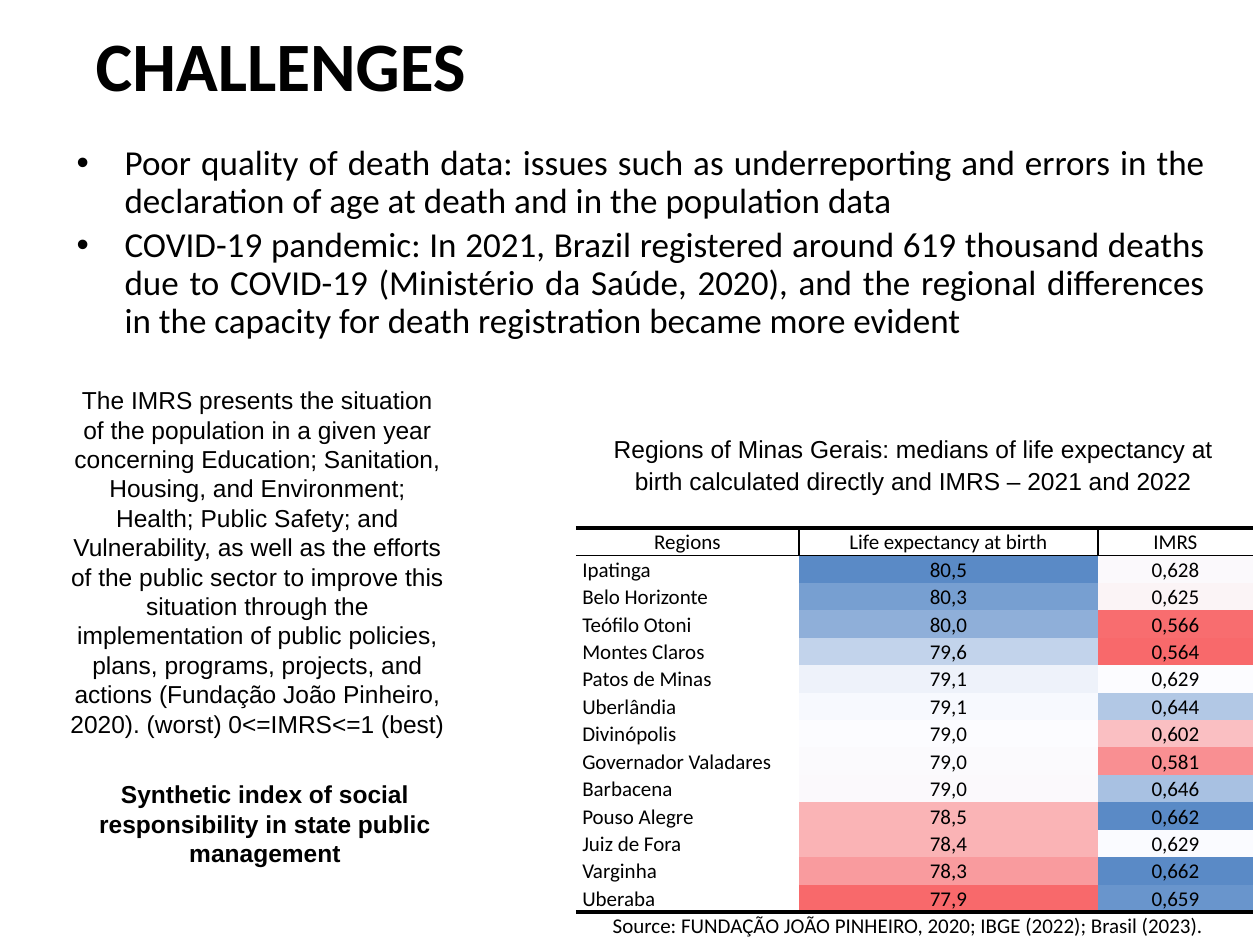
from pptx import Presentation
from pptx import util as u
from pptx.dml.color import RGBColor
from pptx.enum import text
from pptx.oxml.ns import qn
from lxml import etree

PX = 914400 // 126
BLACK = "000000"
CENTER, LEFT, JUSTIFY = text.PP_ALIGN.CENTER, text.PP_ALIGN.LEFT, text.PP_ALIGN.JUSTIFY

# Content
TITLE = "CHALLENGES"
BULLETS = [
    "Poor quality of death data: issues such as underreporting and errors in the "
    "declaration of age at death and in the population data",
    "COVID-19 pandemic: In 2021, Brazil registered around 619 thousand deaths due to "
    "COVID-19 (Ministério da Saúde, 2020), and the regional differences in the capacity "
    "for death registration became more evident",
]
ARIAL = dict(name="Arial", size=14)
CALIBRI = dict(name="Calibri", size=12)
# text, box in px, font, line spacing
NOTES = [
    ("Regions of Minas Gerais: medians of life expectancy at birth calculated directly "
     "and IMRS – 2021 and 2022", (587, 426, 653, 77), ARIAL, 1.07),
    ("The IMRS presents the situation of the population in a given year concerning "
     "Education; Sanitation, Housing, and Environment; Health; Public Safety; and "
     "Vulnerability, as well as the efforts of the public sector to improve this situation "
     "through the implementation of public policies, plans, programs, projects, and actions "
     "(Fundação João Pinheiro, 2020). (worst) 0<=IMRS<=1 (best)",
     (58, 379, 399, 369), ARIAL, 1),
    ("Source: FUNDAÇÃO JOÃO PINHEIRO, 2020; IBGE (2022); Brasil (2023).",
     (576, 906, 664, 38), CALIBRI, 1),
    ("Synthetic index of social responsibility in state public management",
     (58, 773, 414, 102), dict(ARIAL, bold=True), 1),
]
HEADER = ["Regions", "Life expectancy at birth", "IMRS"]
# region, life expectancy, its fill, IMRS, its fill
REGIONS = [
    ("Ipatinga", "80,5", "5A8AC6", "0,628", "FBF9FC"),
    ("Belo Horizonte", "80,3", "779FD1", "0,625", "FBF4F6"),
    ("Teófilo Otoni", "80,0", "8FAFD9", "0,566", "F86D6F"),
    ("Montes Claros", "79,6", "C2D3EB", "0,564", "F8696B"),
    ("Patos de Minas", "79,1", "EEF2FA", "0,629", "FCFCFF"),
    ("Uberlândia", "79,1", "F7F9FE", "0,644", "B2C8E5"),
    ("Divinópolis", "79,0", "FCFCFF", "0,602", "FABFC2"),
    ("Governador Valadares", "79,0", "FBFAFD", "0,581", "F98F92"),
    ("Barbacena", "79,0", "FBF9FC", "0,646", "A8C1E2"),
    ("Pouso Alegre", "78,5", "FAB4B6", "0,662", "5A8AC6"),
    ("Juiz de Fora", "78,4", "FAB3B5", "0,629", "FAFBFF"),
    ("Varginha", "78,3", "F99B9E", "0,662", "5A8AC6"),
    ("Uberaba", "77,9", "F8696B", "0,659", "6995CC"),
]
TABLE_AT, COLUMNS, ROW = (576, 528), (223, 299, 155), 27


def rgb(value):
    return RGBColor.from_string(value)


def box(*lengths):
    return [n * PX for n in lengths]


def place(sp, lengths):
    for name, value in zip(("left", "top", "width", "height"), box(*lengths)):
        setattr(sp, name, value)


def write(p, words, font, **layout):
    for name, value in layout.items():
        setattr(p, name, value)
    r = p.add_run()
    r.text = words
    for name, value in font.items():
        setattr(r.font, name, u.Pt(value) if name == "size" else value)
    r.font.color.rgb = rgb(BLACK)


def border(cell, side, width):
    ln = etree.SubElement(cell._tc.get_or_add_tcPr(), qn("a:ln" + side))
    if not width:
        etree.SubElement(ln, qn("a:noFill"))
        return
    ln.set("w", str(u.Pt(width)))
    fill = etree.SubElement(ln, qn("a:solidFill"))
    etree.SubElement(fill, qn("a:srgbClr")).set("val", BLACK)


prs = Presentation()
prs.slide_width, prs.slide_height = u.Inches(10), u.Inches(7.5)
s = prs.slides.add_slide(prs.slide_layouts[1])

# Title
title = s.shapes.title
place(title, (83, 15, 1134, 98))
tf = title.text_frame
tf.auto_size = text.MSO_AUTO_SIZE.NONE
tf.vertical_anchor = text.MSO_ANCHOR.MIDDLE
write(tf.paragraphs[0], TITLE, dict(name="Calibri", size=39.6, bold=True), alignment=LEFT)

# Bullet list
body = s.placeholders[1]
place(body, (49, 139, 1169, 215))
tf = body.text_frame
tf.auto_size = text.MSO_AUTO_SIZE.NONE
for i, words in enumerate(BULLETS):
    p = tf.add_paragraph() if i else tf.paragraphs[0]
    pPr = p._p.get_or_add_pPr()
    pPr.set("marL", str(u.Inches(0.5)))
    pPr.set("indent", str(-u.Inches(0.38)))
    etree.SubElement(pPr, qn("a:buChar")).set("char", "•")
    write(p, words, dict(name="Calibri", size=20), alignment=JUSTIFY,
          line_spacing=0.9, space_before=u.Pt(3.6 if i else 0))

# Table
rows = [(HEADER, [None] * 3)]
rows += [((name, life, imrs), (None, life_fill, imrs_fill))
         for name, life, life_fill, imrs, imrs_fill in REGIONS]
last = len(rows) - 1
table = s.shapes.add_table(len(rows), len(COLUMNS),
                           *box(*TABLE_AT, sum(COLUMNS), ROW * len(rows))).table
table.first_row = table.horz_banding = False
for column, width in zip(table.columns, COLUMNS):
    column.width = width * PX
for i, (words, fills) in enumerate(rows):
    table.rows[i].height = ROW * PX
    for j, (word, fill) in enumerate(zip(words, fills)):
        cell = table.cell(i, j)
        cell.margin_left = cell.margin_right = u.Inches(0.05)
        cell.margin_top = cell.margin_bottom = 0
        cell.vertical_anchor = text.MSO_ANCHOR.BOTTOM if i else text.MSO_ANCHOR.MIDDLE
        border(cell, "L", 1 if i == 0 and j > 0 else 0)
        border(cell, "R", 1 if i == 0 and j < 2 else 0)
        border(cell, "T", {0: 2.25, 1: 1}.get(i, 0))
        border(cell, "B", {0: 1, last: 2.25}.get(i, 0))
        if fill:
            cell.fill.solid()
            cell.fill.fore_color.rgb = rgb(fill)
        else:
            cell.fill.background()
        write(cell.text_frame.paragraphs[0], word, CALIBRI,
              alignment=LEFT if i and j == 0 else CENTER, line_spacing=1.07)

# Notes and captions
for words, lengths, font, spacing in NOTES:
    tf = s.shapes.add_textbox(*box(*lengths)).text_frame
    tf.word_wrap = True
    tf.auto_size = text.MSO_AUTO_SIZE.SHAPE_TO_FIT_TEXT
    write(tf.paragraphs[0], words, font, alignment=CENTER, line_spacing=spacing)

prs.save("out.pptx")
